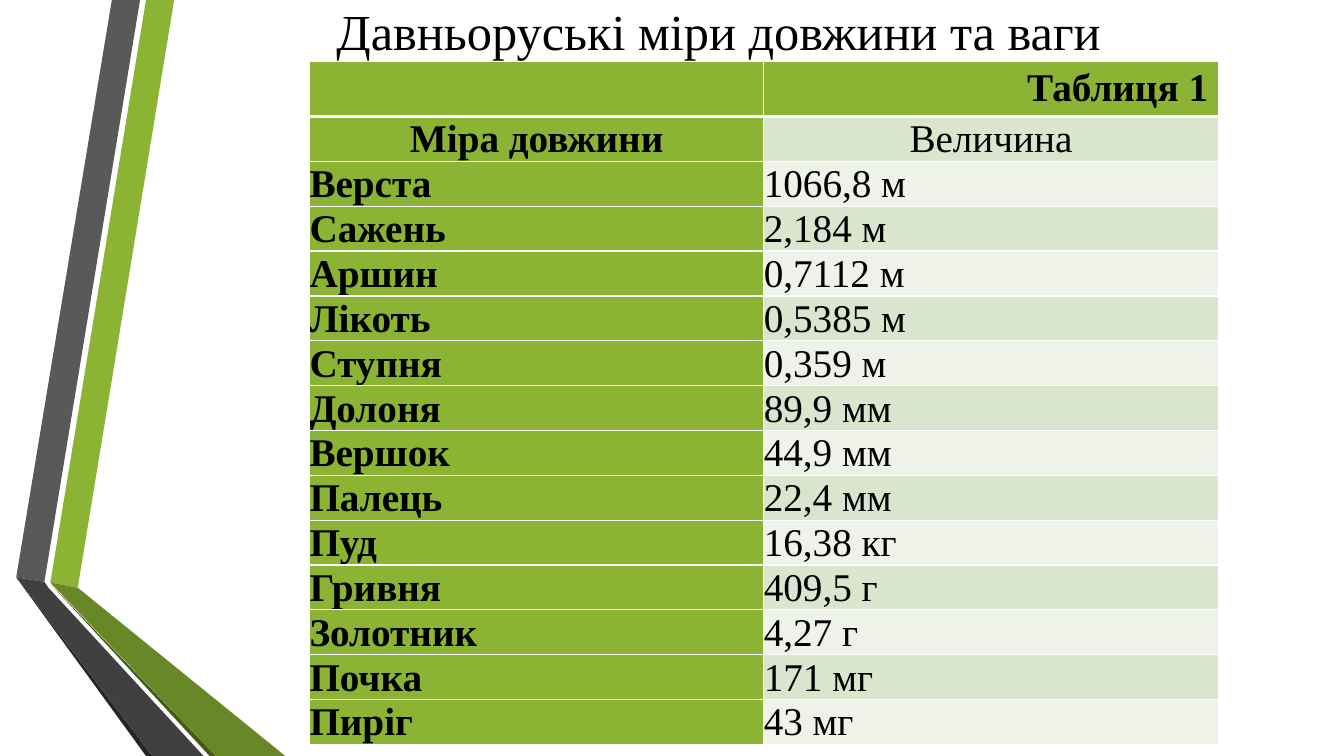
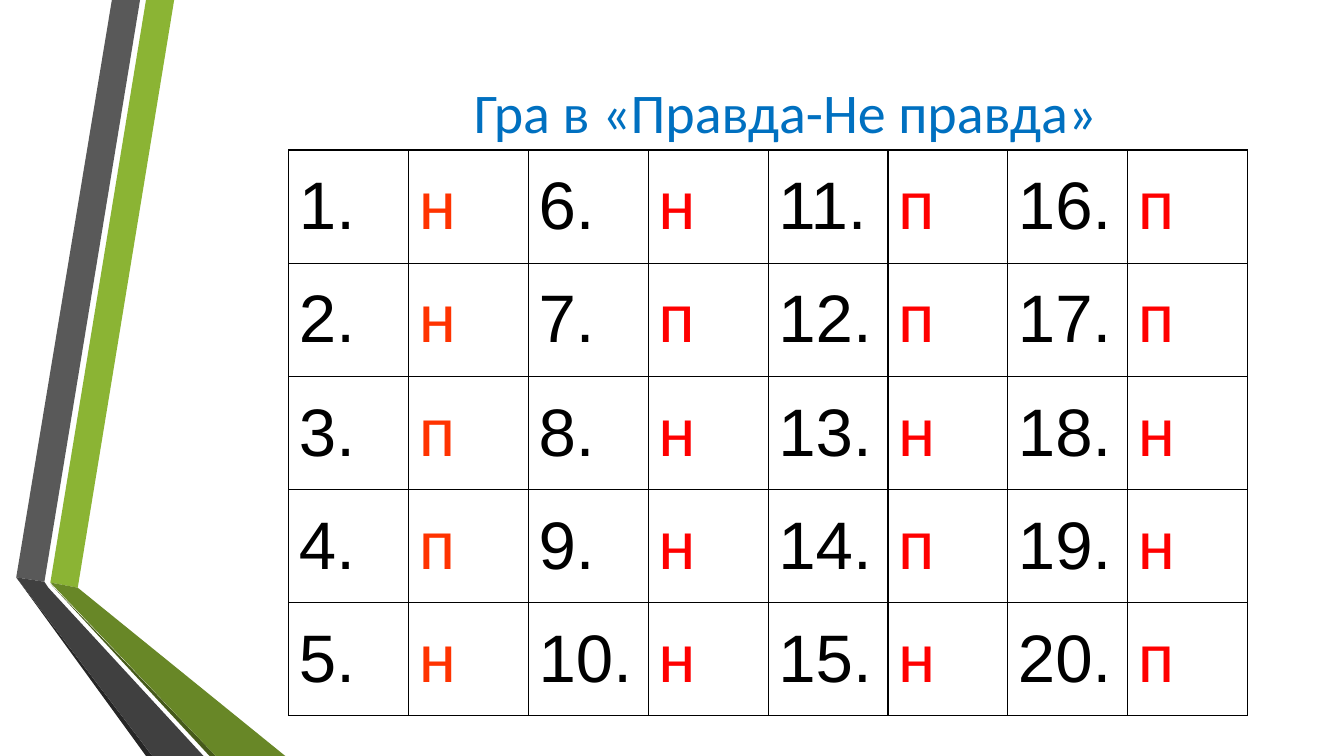
import pptx
import pptx.dml.color
import pptx.enum.text
import pptx.oxml
import pptx.oxml.ns
import pptx.util

Cm = pptx.util.Cm
Pt = pptx.util.Pt
RGBColor = pptx.dml.color.RGBColor
Align = pptx.enum.text.PP_ALIGN
Anchor = pptx.enum.text.MSO_ANCHOR

BLACK = RGBColor(0x00, 0x00, 0x00)
WHITE = RGBColor(0xFF, 0xFF, 0xFF)
GREEN = RGBColor(0x8B, 0xB4, 0x34)
MEDIUM_GREEN = RGBColor(0x68, 0x87, 0x27)
DARK_GREEN = RGBColor(0x46, 0x5A, 0x1A)
PALE_GREEN = RGBColor(0xDA, 0xE5, 0xCD)
PALEST_GREEN = RGBColor(0xEE, 0xF2, 0xE8)
GRAY = RGBColor(0x59, 0x59, 0x59)
DARK_GRAY = RGBColor(0x40, 0x40, 0x40)
DARKEST_GRAY = RGBColor(0x26, 0x26, 0x26)
BLUE = RGBColor(0x00, 0x70, 0xC0)
RED = RGBColor(0xFF, 0x00, 0x00)
ORANGE_RED = RGBColor(0xFF, 0x33, 0x00)

RIBBONS = [
    (GREEN, [(1.27, 14.68), (1.96, 14.81), (4.39, 0), (3.68, 0)]),
    (GRAY, [(3.53, 0), (2.82, 0), (0.41, 14.55), (1.12, 14.66)]),
    (DARKEST_GRAY, [(0.41, 14.55), (3.68, 19.05), (3.84, 19.05)]),
    (DARK_GREEN, [(1.27, 14.71), (5.28, 19.05), (5.44, 19.05)]),
    (MEDIUM_GREEN, [(1.27, 14.68), (5.44, 19.05), (7.19, 19.05), (1.96, 14.81)]),
    (DARK_GRAY, [(5.13, 19.05), (1.22, 14.81), (1.12, 14.66), (0.41, 14.55), (3.84, 19.05)]),
]

MEASURES = [
    ("Міра довжини", "Величина"),
    ("Верста", "1066,8 м"),
    ("Сажень", "2,184 м"),
    ("Аршин", "0,7112 м"),
    ("Лікоть", "0,5385 м"),
    ("Ступня", "0,359 м"),
    ("Долоня", "89,9 мм"),
    ("Вершок", "44,9 мм"),
    ("Палець", "22,4 мм"),
    ("Пуд", "16,38 кг"),
    ("Гривня", "409,5 г"),
    ("Золотник", "4,27 г"),
    ("Почка", "171 мг"),
    ("Пиріг", "43 мг"),
]
ANSWERS = ["ннппн", "нпннн", "ппнпн", "ппннп"]

NO_MARGINS = dict.fromkeys(("margin_left", "margin_right", "margin_top", "margin_bottom"), 0)
CAPTION_CELL = {"margin_top": Cm(0.12), "margin_bottom": Cm(0.08), "vertical_anchor": Anchor.TOP}
MEASURE_CELL = {**NO_MARGINS, "vertical_anchor": Anchor.BOTTOM}
ANSWER_CELL = {"vertical_anchor": Anchor.MIDDLE}
MEASURE_FONT = {"name": "Times New Roman", "size": Pt(28)}
ANSWER_FONT = {"name": "Arial", "size": Pt(48), "bold": False}


def apply_format(target, values):
    for name, value in values.items():
        setattr(target, name, value)


class Deck:
    def __init__(self):
        self.presentation = pptx.Presentation()
        apply_format(self.presentation, {"slide_width": Cm(33.87), "slide_height": Cm(19.05)})
        self.slide = None

    def add_slide(self):
        self.slide = self.presentation.slides.add_slide(self.presentation.slide_layouts[6])
        for color, points in RIBBONS:
            self.ribbon(color, points)

    def ribbon(self, color, points):
        vertices = [(Cm(x), Cm(y)) for x, y in points]
        builder = self.slide.shapes.build_freeform(*vertices[0])
        builder.add_line_segments(vertices[1:], close=True)
        shape = builder.convert_to_shape()
        shape.shadow.inherit = False
        shape.fill.solid()
        shape.fill.fore_color.rgb = color
        shape.line.fill.background()

    def text(self, text_frame, content, font, color, paragraph_format):
        paragraph = text_frame.paragraphs[0]
        apply_format(paragraph, paragraph_format)
        run = paragraph.add_run()
        run.text = content
        apply_format(run.font, font)
        run.font.color.rgb = color

    def title(self, content, box, font, color):
        shape = self.slide.shapes.add_textbox(*map(Cm, box))
        apply_format(shape.text_frame, {
            **NO_MARGINS, "word_wrap": True, "vertical_anchor": Anchor.MIDDLE,
        })
        self.text(shape.text_frame, content, font, color, {"alignment": Align.CENTER})

    def table(self, left, top, widths, heights):
        frame = self.slide.shapes.add_table(
            len(heights), len(widths), Cm(left), Cm(top), Cm(sum(widths)), Cm(sum(heights)))
        table = frame.table
        apply_format(table, {"first_row": False, "horz_banding": False})
        for column, width in zip(table.columns, widths):
            column.width = Cm(width)
        for row, height in zip(table.rows, heights):
            row.height = Cm(height)
        return table

    def cell(self, cell, fill, border, cell_format, thick_sides=""):
        properties = cell._tc.get_or_add_tcPr()
        for side in "LRTB":
            width = Pt(3 if side in thick_sides else 1)
            properties.append(pptx.oxml.parse_xml(
                f'<a:ln{side} {pptx.oxml.ns.nsdecls("a")} w="{width}"><a:solidFill>'
                f'<a:srgbClr val="{border}"/></a:solidFill></a:ln{side}>'))
        cell.fill.solid()
        cell.fill.fore_color.rgb = fill
        apply_format(cell, cell_format)


def build_measures(deck):
    deck.add_slide()
    deck.title("Давньоруські міри довжини та ваги", (4.27, 0, 27.69, 1.55),
               {"name": "Times New Roman", "size": Pt(36)}, BLACK)
    table = deck.table(7.8, 1.55, [11.45, 11.45], [1.35] + [1.13] * len(MEASURES))
    for index, caption in enumerate(("", "Таблиця 1")):
        cell = table.cell(0, index)
        deck.cell(cell, GREEN, WHITE, CAPTION_CELL, "B")
        if caption:
            deck.text(cell.text_frame, caption, {**MEASURE_FONT, "bold": True}, BLACK,
                      {"alignment": Align.RIGHT})
    for row, measure in enumerate(MEASURES, 1):
        fills = (GREEN, PALE_GREEN if row % 2 else PALEST_GREEN)
        alignment = Align.CENTER if row == 1 else Align.LEFT
        for column, (content, fill) in enumerate(zip(measure, fills)):
            cell = table.cell(row, column)
            deck.cell(cell, fill, WHITE, MEASURE_CELL, "T" if row == 1 else "")
            deck.text(cell.text_frame, content, {**MEASURE_FONT, "bold": column == 0}, BLACK,
                      {"alignment": alignment, "line_spacing": Pt(32)})


def build_game(deck):
    deck.add_slide()
    deck.title("Гра в «Правда-Не правда»", (10.79, 1.93, 18, 1.72),
               {"name": "Calibri", "size": Pt(40)}, BLUE)
    rows = len(ANSWERS[0])
    table = deck.table(7.28, 3.78, [3.02] * 2 * len(ANSWERS), [2.85] * rows)
    for group, answers in enumerate(ANSWERS):
        answer_color = RED if group else ORANGE_RED
        for row, answer in enumerate(answers):
            number = f"{group * rows + row + 1}."
            for offset, (content, color) in enumerate(((number, BLACK), (answer, answer_color))):
                cell = table.cell(row, 2 * group + offset)
                deck.cell(cell, WHITE, BLACK, ANSWER_CELL)
                deck.text(cell.text_frame, content, ANSWER_FONT, color, {"alignment": Align.LEFT})


def main():
    deck = Deck()
    build_measures(deck)
    build_game(deck)
    deck.presentation.save("out.pptx")


if __name__ == "__main__":
    main()
